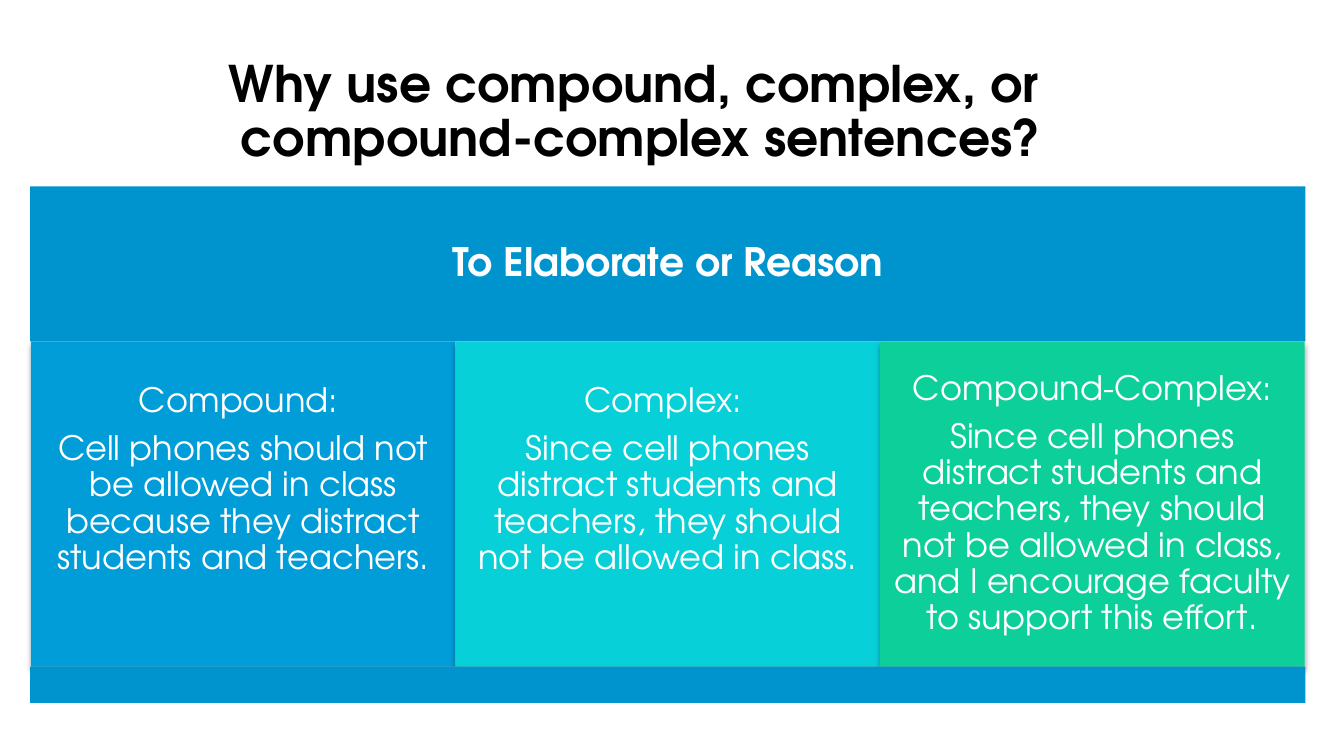
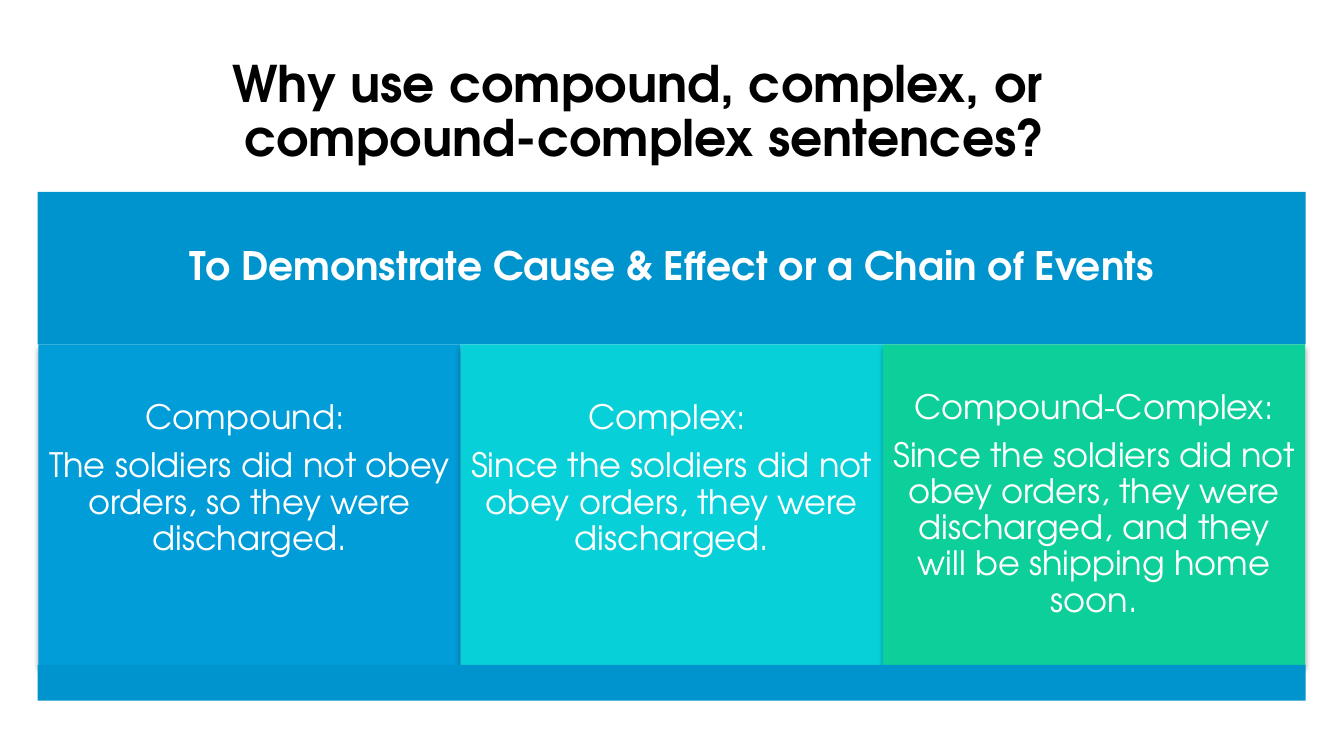
from lxml import etree
from pptx import Presentation
from pptx.dml.color import RGBColor
from pptx.enum.shapes import MSO_SHAPE
from pptx.enum.text import MSO_ANCHOR, MSO_AUTO_SIZE, PP_ALIGN
from pptx.oxml import parse_xml
from pptx.util import Pt

FONT = "TeX Gyre Adventor"
BLACK, WHITE, BAND = "000000", "FFFFFF", "0094CE"
COLUMN_FILLS = ["009DD9", "08D0D9", "0DCF99"]
TITLE = "Why use compound, complex, or \vcompound-complex sentences?"
TITLE_RIGHT = 894
HEADING_SHARE, COLUMN_SHARE, FOOTER_SHARE = 0.3, 0.63, 0.07
COLUMN_MARGIN = 0.45
LABELS = ["Compound: ", "Complex: ", "Compound-Complex:"]
SHADOW = (
    '<a:outerShdw xmlns:a="http://schemas.openxmlformats.org/drawingml/2006/main"'
    ' blurRad="50800" dist="38100" dir="5400000" rotWithShape="0">'
    '<a:srgbClr val="000000"><a:alpha val="35000"/></a:srgbClr></a:outerShdw>'
)

# left, top, width, height of the panel; heading; sentences; spare room under short columns
SLIDES = [
    ((21.6, 133.2, 910.8, 368.8), "To Elaborate or Reason", [
        "Cell phones should not be allowed in class because they distract "
        "students and teachers.",
        "Since cell phones distract students and teachers, they should not "
        "be allowed in class.",
        "Since cell phones distract students and teachers, they should not "
        "be allowed in class, and I encourage faculty to support this effort.",
    ], 34.3),
    ((26.9, 137, 905.8, 363.4), "To Demonstrate Cause & Effect or a Chain of Events", [
        "The soldiers did not obey orders, so they were discharged.",
        "Since the soldiers did not obey orders, they were discharged.",
        "Since the soldiers did not obey orders, they were discharged, and "
        "they will be shipping home soon.",
    ], 36.4),
]


def write(shape, texts, size, color, bold, inset_x, inset_top, inset_bottom):
    """Fill the shape with centred paragraphs in the deck's font."""
    frame = shape.text_frame
    frame.word_wrap = True
    frame.auto_size = MSO_AUTO_SIZE.NONE
    frame.vertical_anchor = MSO_ANCHOR.MIDDLE
    frame.margin_left = frame.margin_right = Pt(inset_x)
    frame.margin_top, frame.margin_bottom = Pt(inset_top), Pt(inset_bottom)
    for index, text in enumerate(texts):
        para = frame.add_paragraph() if index else frame.paragraphs[0]
        para.text = text
        para.alignment = PP_ALIGN.CENTER
        para.line_spacing = 0.9
        para.space_before = Pt(8.4 if index else 0)
        para.font.name = FONT
        para.font.size = Pt(size)
        para.font.bold = bold
        para.font.color.rgb = RGBColor.from_string(color)


def add_block(page, left, top, width, height, fill):
    block = page.shapes.add_shape(
        MSO_SHAPE.RECTANGLE, Pt(left), Pt(top), Pt(width), Pt(height))
    block.fill.solid()
    block.fill.fore_color.rgb = RGBColor.from_string(fill)
    block.line.fill.background()
    block.shadow.inherit = False
    return block


deck = Presentation()
deck.slide_width, deck.slide_height = Pt(960), Pt(540)

for (left, top, width, height), heading, sentences, spare in SLIDES:
    page = deck.slides.add_slide(deck.slide_layouts[5])
    title = page.shapes.title
    title.left, title.top = Pt(left), Pt(28.8)
    title.width, title.height = Pt(TITLE_RIGHT - left), Pt(104.4)
    write(title, [TITLE], 36, BLACK, True, 7.2, 3.6, 3.6)

    heading_height = height * HEADING_SHARE
    band = add_block(page, left, top, width, heading_height, BAND)
    write(band, [heading], 28, WHITE, True, 8.4, 8.4, 8.4)

    column_top = top + heading_height
    column_height = height * COLUMN_SHARE
    column_width = (width - 2 * COLUMN_MARGIN) / 3
    for index, (fill, label, sentence) in enumerate(zip(COLUMN_FILLS, LABELS, sentences)):
        column_left = left + COLUMN_MARGIN + index * column_width
        column = add_block(
            page, column_left, column_top, column_width, column_height, fill)
        effects = column._element.spPr.find("{*}effectLst")
        effects.append(parse_xml(SHADOW))
        bottom = 7.2 if index == 2 else 7.2 + spare
        write(column, [label, sentence], 24, WHITE, False, 7.2, 7.2, bottom)

    add_block(page, left, column_top + column_height, width, height * FOOTER_SHARE, BAND)

deck.save("out.pptx")
